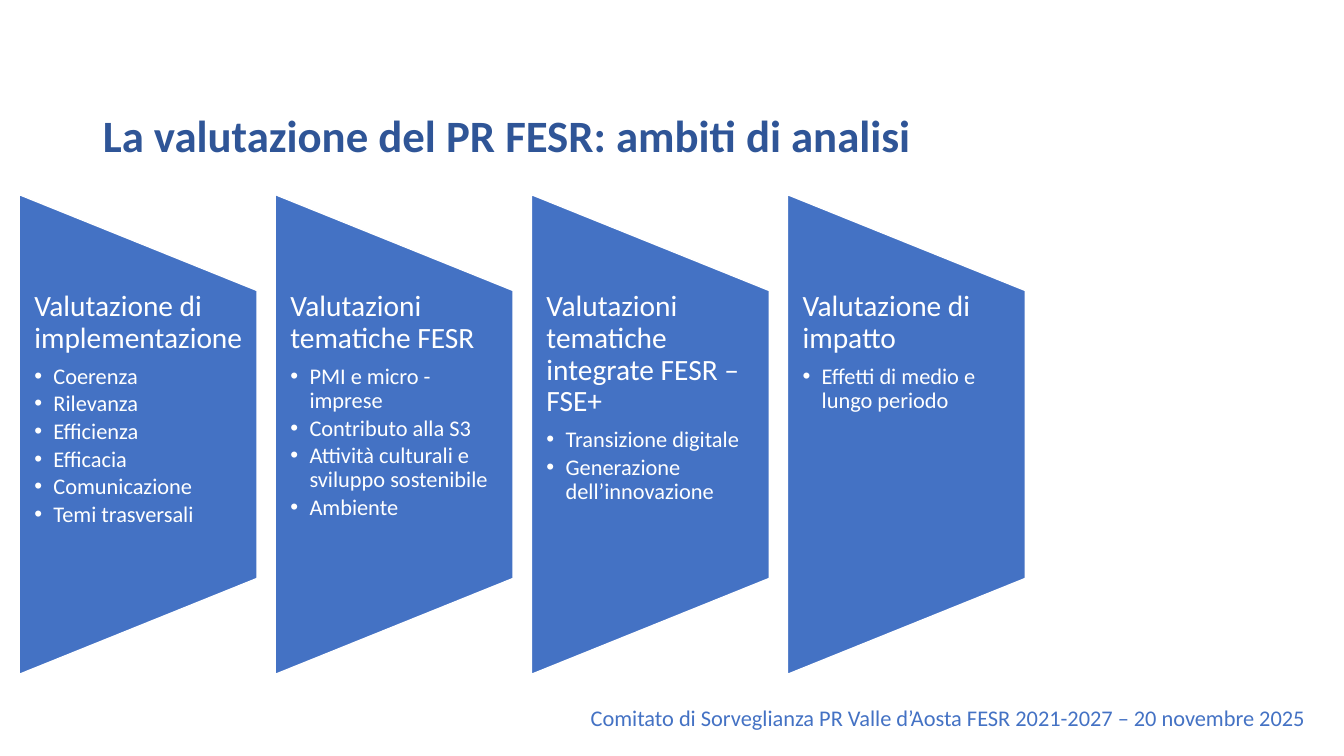
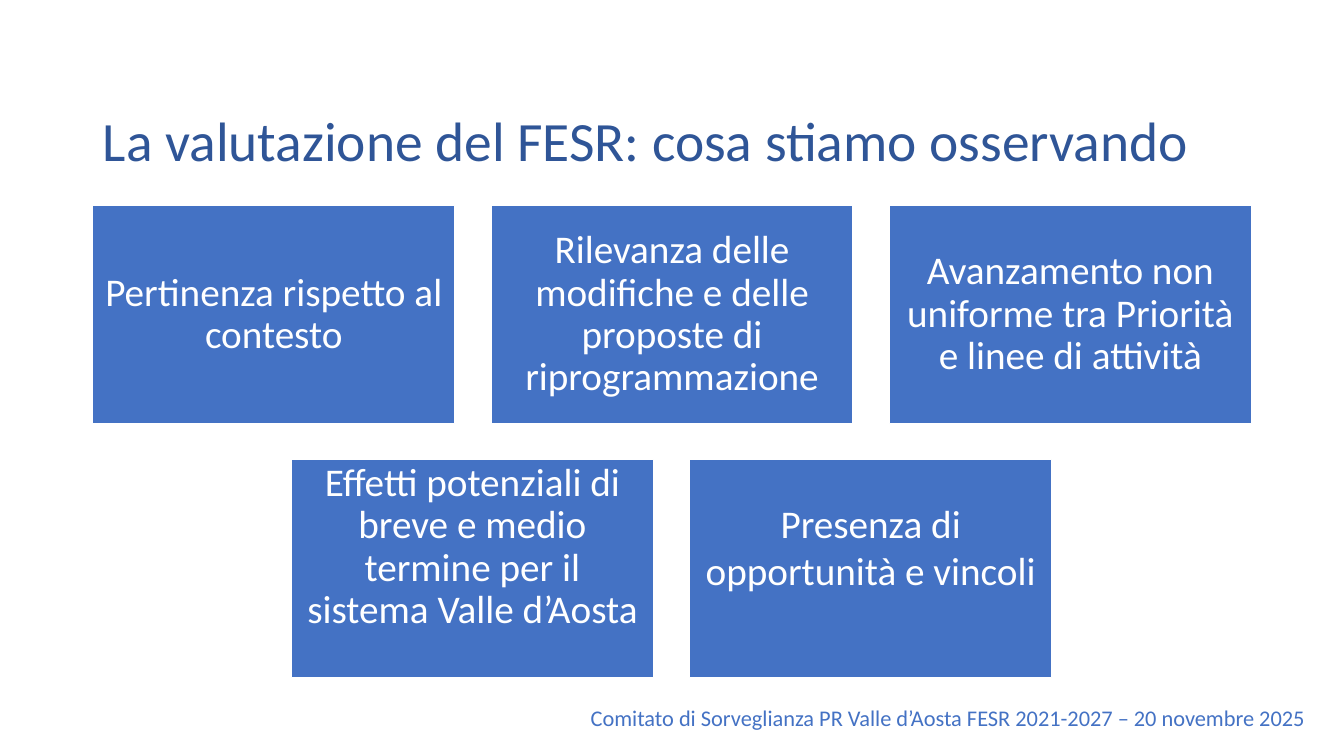
from dataclasses import dataclass
from typing import Optional

import pptx
import pptx.dml.color
import pptx.enum.shapes
import pptx.enum.text
import pptx.oxml
import pptx.oxml.ns
import pptx.util

# Shared measures (100 px to the inch) and style
EMU_PER_PX = 9144
SLIDE_WIDTH, SLIDE_HEIGHT = 1333, 750
FONT = "Calibri"
BLUE, DARK_BLUE, WHITE = "4472C4", "2F5597", "FFFFFF"
FOOTER = "Comitato di Sorveglianza PR Valle d’Aosta FESR 2021-2027 – 20 novembre 2025"
TITLE_LAYOUT, FOUR_BODIES_LAYOUT = 5, 4

ANCHOR = pptx.enum.text.MSO_ANCHOR
ALIGN = pptx.enum.text.PP_ALIGN
AUTO_SIZE = pptx.enum.text.MSO_AUTO_SIZE
PRESET = pptx.enum.shapes.MSO_SHAPE


@dataclass(frozen=True)
class Box:
    left: int
    top: int
    width: int
    height: int


@dataclass(frozen=True)
class Insets:
    left: int = 10
    top: int = 5
    right: int = 10
    bottom: int = 5


@dataclass(frozen=True)
class Column:
    heading: str
    items: tuple[str, ...]


@dataclass(frozen=True)
class Tile:
    text: str
    top_inset: int = 12
    bottom_inset: int = 12
    line_spacing: float = 0.9


COLUMNS = (
    Column("Valutazione di implementazione",
           ("Coerenza", "Rilevanza", "Efficienza", "Efficacia",
            "Comunicazione", "Temi trasversali")),
    Column("Valutazioni tematiche FESR",
           ("PMI e micro - imprese", "Contributo alla S3",
            "Attività culturali e sviluppo sostenibile", "Ambiente")),
    Column("Valutazioni tematiche integrate FESR – FSE+",
           ("Transizione digitale", "Generazione dell’innovazione")),
    Column("Valutazione di impatto", ("Effetti di medio e lungo periodo",)),
)

TILE_ROWS = (
    (Tile("Pertinenza rispetto al contesto"),
     Tile("Rilevanza delle modifiche e delle proposte di riprogrammazione"),
     Tile("Avanzamento non uniforme tra Priorità e linee di attività")),
    (Tile("Effetti potenziali di breve e medio termine per il sistema Valle d’Aosta", 1, 43),
     Tile("Presenza di opportunità e vincoli", 12, 56, 1.0)),
)


# Helpers
def px(length: int) -> pptx.util.Emu:
    return pptx.util.Emu(length * EMU_PER_PX)


def color(value: str) -> pptx.dml.color.RGBColor:
    return pptx.dml.color.RGBColor.from_string(value)


def place(shape, box: Box) -> None:
    shape.left, shape.top = px(box.left), px(box.top)
    shape.width, shape.height = px(box.width), px(box.height)


def format_frame(shape, insets: Insets, anchor=ANCHOR.TOP, auto_size=AUTO_SIZE.NONE) -> None:
    frame = shape.text_frame
    frame.word_wrap = True
    frame.auto_size = auto_size
    frame.vertical_anchor = anchor
    frame.margin_left, frame.margin_right = px(insets.left), px(insets.right)
    frame.margin_top, frame.margin_bottom = px(insets.top), px(insets.bottom)


def write(paragraph, text: str, size: float, text_color: str, bold: bool = False,
          align=ALIGN.LEFT, line_spacing: float = 1.0, space_after: float = 0) -> None:
    paragraph.alignment = align
    paragraph.line_spacing = line_spacing
    paragraph.space_before = pptx.util.Pt(0)
    paragraph.space_after = pptx.util.Pt(space_after)
    run = paragraph.add_run()
    run.text = text
    run.font.name = FONT
    run.font.size = pptx.util.Pt(size)
    run.font.bold = bold
    run.font.color.rgb = color(text_color)


def set_bullet(paragraph, character: Optional[str], indent: int = 0) -> None:
    properties = paragraph._p.get_or_add_pPr()
    properties.set("marL", str(px(indent)))
    properties.set("indent", str(-px(indent)))
    namespace = pptx.oxml.ns.nsdecls("a")
    if character is None:
        elements = [f"<a:buNone {namespace}/>"]
    else:
        elements = [f'<a:buFont {namespace} typeface="Arial"/>',
                    f'<a:buChar {namespace} char="{character}"/>']
    for element in elements:
        properties.append(pptx.oxml.parse_xml(element))


def add_blue_shape(slide, preset, box: Box):
    shape = slide.shapes.add_shape(preset, px(box.left), px(box.top),
                                   px(box.width), px(box.height))
    shape.shadow.inherit = False
    shape.fill.solid()
    shape.fill.fore_color.rgb = color(BLUE)
    shape.line.color.rgb = color(WHITE)
    shape.line.width = pptx.util.Pt(1)
    return shape


def add_slide(presentation, layout: int, title_text: str, title_size: float, bold: bool):
    slide = presentation.slides.add_slide(presentation.slide_layouts[layout])
    # The title sits one line below the middle of its frame
    title = slide.shapes.title
    place(title, Box(92, 40, 1150, 145))
    line_height = round(title_size * 1.22 * 0.9 / 72 * 100)
    format_frame(title, Insets(top=5 + line_height), ANCHOR.MIDDLE)
    write(title.text_frame.paragraphs[0], title_text, title_size, DARK_BLUE, bold,
          line_spacing=0.9)
    footer = slide.shapes.add_textbox(px(576), px(694), px(738), px(37))
    format_frame(footer, Insets(), auto_size=AUTO_SIZE.SHAPE_TO_FIT_TEXT)
    write(footer.text_frame.paragraphs[0], FOOTER, 16, BLUE)
    return slide


# Columns: a trapezoid turned on its side, with a list on top
def draw_column(slide, body, column: Column, left: int) -> None:
    width, height, center_y = 236, 476, 431
    trapezoid = add_blue_shape(
        slide, PRESET.FLOWCHART_MANUAL_OPERATION,
        Box(left + (width - height) // 2, center_y - width // 2, height, width))
    trapezoid.rotation = 270
    place(body, Box(left, 289, width, 286))
    # The narrower right inset leaves room for the longest heading word
    format_frame(body, Insets(15, 0, 10, 0))
    frame = body.text_frame
    heading = frame.paragraphs[0]
    set_bullet(heading, None)
    write(heading, column.heading, 21, WHITE, line_spacing=0.9, space_after=7.3)
    for item in column.items:
        paragraph = frame.add_paragraph()
        paragraph.level = 1
        set_bullet(paragraph, "•", 19)
        write(paragraph, item, 16, WHITE, line_spacing=0.9, space_after=2.4)
    # Bring the list in front of its trapezoid
    body.element.getparent().append(body.element)


def build_scope_slide(presentation) -> None:
    slide = add_slide(presentation, FOUR_BODIES_LAYOUT,
                      "La valutazione del PR FESR: ambiti di analisi", 32, True)
    bodies = [shape for shape in slide.placeholders if shape.placeholder_format.idx != 0]
    for index, (body, column) in enumerate(zip(bodies, COLUMNS)):
        draw_column(slide, body, column, 19 + 254 * index)


# Tiles: rows centred on the slide
def build_findings_slide(presentation) -> None:
    slide = add_slide(presentation, TITLE_LAYOUT,
                      "La valutazione del FESR: cosa stiamo osservando", 39.6, False)
    width, height, gap = 359, 216, 36
    for row, tiles in enumerate(TILE_ROWS):
        row_width = len(tiles) * (width + gap) - gap
        row_left = (SLIDE_WIDTH - row_width) // 2
        for index, tile in enumerate(tiles):
            shape = add_blue_shape(
                slide, PRESET.RECTANGLE,
                Box(row_left + index * (width + gap), 204 + row * (height + gap),
                    width, height))
            format_frame(shape, Insets(12, tile.top_inset, 12, tile.bottom_inset),
                         ANCHOR.MIDDLE)
            write(shape.text_frame.paragraphs[0], tile.text, 28, WHITE,
                  align=ALIGN.CENTER, line_spacing=tile.line_spacing)


def main() -> None:
    presentation = pptx.Presentation()
    presentation.slide_width = px(SLIDE_WIDTH)
    presentation.slide_height = px(SLIDE_HEIGHT)
    build_scope_slide(presentation)
    build_findings_slide(presentation)
    presentation.save("out.pptx")


if __name__ == "__main__":
    main()
